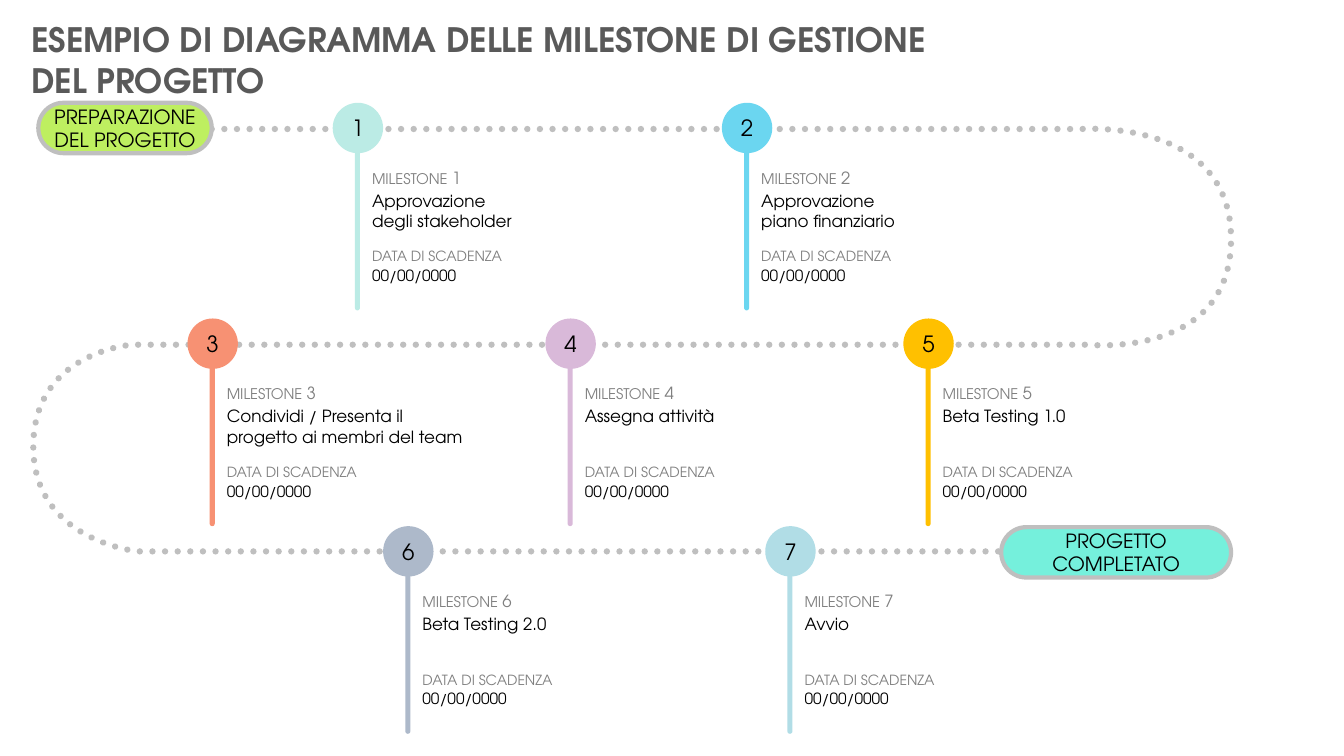
import pptx
import pptx.util
import pptx.dml.color
import pptx.enum.dml
import pptx.enum.shapes
import pptx.enum.text
import pptx.oxml
import pptx.oxml.ns

RGB = pptx.dml.color.RGBColor
SHAPE = pptx.enum.shapes.MSO_SHAPE
ALIGN = pptx.enum.text.PP_ALIGN
ANCHOR = pptx.enum.text.MSO_ANCHOR

PX = 9144  # 100 px to the inch
FONT = "TeX Gyre Adventor"
BLACK = RGB(0x00, 0x00, 0x00)
TITLE_GRAY = RGB(0x59, 0x59, 0x59)
LABEL_GRAY = RGB(0x80, 0x80, 0x80)
TRACK_GRAY = RGB(0xBF, 0xBF, 0xBF)
LIME = RGB(0xBE, 0xEF, 0x60)
TURQUOISE = RGB(0x75, 0xF0, 0xDC)
MINT = RGB(0xBB, 0xEB, 0xE5)
SKY = RGB(0x6B, 0xD6, 0xF0)
CORAL = RGB(0xF7, 0x91, 0x73)
LILAC = RGB(0xD9, 0xB9, 0xD9)
AMBER = RGB(0xFF, 0xC0, 0x00)
SLATE = RGB(0xAD, 0xB9, 0xCA)
ICE = RGB(0xB1, 0xDD, 0xE6)


def write(sp, text, size, color=BLACK, bold=False, align=ALIGN.LEFT):
    """Append a formatted run to the first paragraph of a shape."""
    p = sp.text_frame.paragraphs[0]
    p.alignment = align
    r = p.add_run()
    r.text = text
    r.font.name = FONT
    r.font.size = pptx.util.Pt(size)
    r.font.bold = bold
    r.font.color.rgb = color


def add_box(shapes, x, y, w, h, kind=None, fill=None):
    """Add a filled shape, or a text box if no kind is given, without insets."""
    box = [v * PX for v in (x, y, w, h)]
    if kind is None:
        sp = shapes.add_textbox(*box)
    else:
        sp = shapes.add_shape(kind, *box)
        sp.shadow.inherit = False
        sp.fill.solid()
        sp.fill.fore_color.rgb = fill
        sp.line.fill.background()
        if kind == SHAPE.ROUNDED_RECTANGLE:
            sp.adjustments[0] = 0.5
    tf = sp.text_frame
    tf.word_wrap = True
    tf.margin_left = tf.margin_right = tf.margin_top = tf.margin_bottom = 0
    tf.vertical_anchor = ANCHOR.TOP if kind is None else ANCHOR.MIDDLE
    return sp


prs = pptx.Presentation()
prs.slide_width, prs.slide_height = 1333 * PX, 750 * PX
s = prs.slides.add_slide(prs.slide_layouts[5])

# Title
title = s.shapes.title
title.left, title.top, title.width, title.height = (v * PX for v in (21, 14, 925, 91))
title.text_frame.auto_size = pptx.enum.text.MSO_AUTO_SIZE.SHAPE_TO_FIT_TEXT
title.text_frame.vertical_anchor = ANCHOR.TOP
title.text_frame.paragraphs[0].line_spacing = 1.0
write(title, "ESEMPIO DI DIAGRAMMA DELLE MILESTONE DI GESTIONE DEL PROGETTO",
      24, color=TITLE_GRAY, bold=True)

# Dotted track: corner points, some reached by a curve with two control points
LEFT, TOP = 33, 128
track_points = [
    ((1073, 128), None),
    ((1221, 237), [(1073, 128), (1221, 117)]),
    ((1078, 342), [(1221, 357), (1078, 342)]),
    ((131, 342), None),
    ((33, 443), [(131, 342), (33, 349)]),
    ((137, 547), [(33, 537), (137, 547)]),
    ((1028, 547), None),
]
builder = s.shapes.build_freeform(210, TOP, scale=PX)
builder.add_line_segments([point for point, _ in track_points], close=False)
track = builder.convert_to_shape()
lines = list(track.element.iter(pptx.oxml.ns.qn("a:lnTo")))
for line, (end, controls) in zip(lines, track_points):
    if controls:
        pts = "".join(f'<a:pt x="{x - LEFT}" y="{y - TOP}"/>' for x, y in controls + [end])
        curve = pptx.oxml.parse_xml(
            f'<a:cubicBezTo {pptx.oxml.ns.nsdecls("a")}>{pts}</a:cubicBezTo>')
        line.getparent().replace(line, curve)
track.shadow.inherit = False
track.fill.background()
track.line.color.rgb = TRACK_GRAY
track.line.width = pptx.util.Pt(4.5)
track.line.dash_style = pptx.enum.dml.MSO_LINE.ROUND_DOT
track.element.spPr.find(pptx.oxml.ns.qn("a:ln")).set("cap", "rnd")

# Start and finish
for text, x, y, w, fill in [
    ("PREPARAZIONE DEL PROGETTO", 38, 102, 172, LIME),
    ("PROGETTO COMPLETATO", 993, 523, 228, TURQUOISE),
]:
    sp = add_box(s.shapes, x, y, w, 50, SHAPE.ROUNDED_RECTANGLE, fill)
    sp.line.color.rgb = TRACK_GRAY
    sp.line.width = pptx.util.Pt(3)
    write(sp, text, 14, align=ALIGN.CENTER)

# Milestones: left, top, description width, colour, description
milestones = [
    (330, 102, 152, MINT, "Approvazione degli stakeholder"),
    (716, 102, 137, SKY, "Approvazione piano finanziario"),
    (186, 316, 246, CORAL, "Condividi / Presenta il progetto ai membri del team"),
    (541, 316, 137, LILAC, "Assegna attività"),
    (896, 316, 137, AMBER, "Beta Testing 1.0"),
    (380, 522, 137, SLATE, "Beta Testing 2.0"),
    (759, 522, 137, ICE, "Avvio"),
]
for number, (x, y, w, color, description) in enumerate(milestones, 1):
    shapes = s.shapes.add_group_shape().shapes
    text_x = x + 39
    add_box(shapes, x + 22, y + 19, 5, 187, SHAPE.ROUNDED_RECTANGLE, color)

    label = add_box(shapes, text_x, y + 64, 117, 26)
    for text, size in [("MILESTONE", 10.5), (" ", 11), (str(number), 12)]:
        write(label, text, size, color=LABEL_GRAY)
    write(add_box(shapes, text_x, y + 87, w, 57), description, 12)
    write(add_box(shapes, text_x, y + 144, 137, 18), "DATA DI SCADENZA", 10,
          color=LABEL_GRAY)
    write(add_box(shapes, text_x, y + 162, 90, 26), "00/00/0000", 11)

    circle = add_box(shapes, x, y, 50, 50, SHAPE.OVAL, color)
    write(circle, str(number), 16, align=ALIGN.CENTER)

prs.save("out.pptx")
